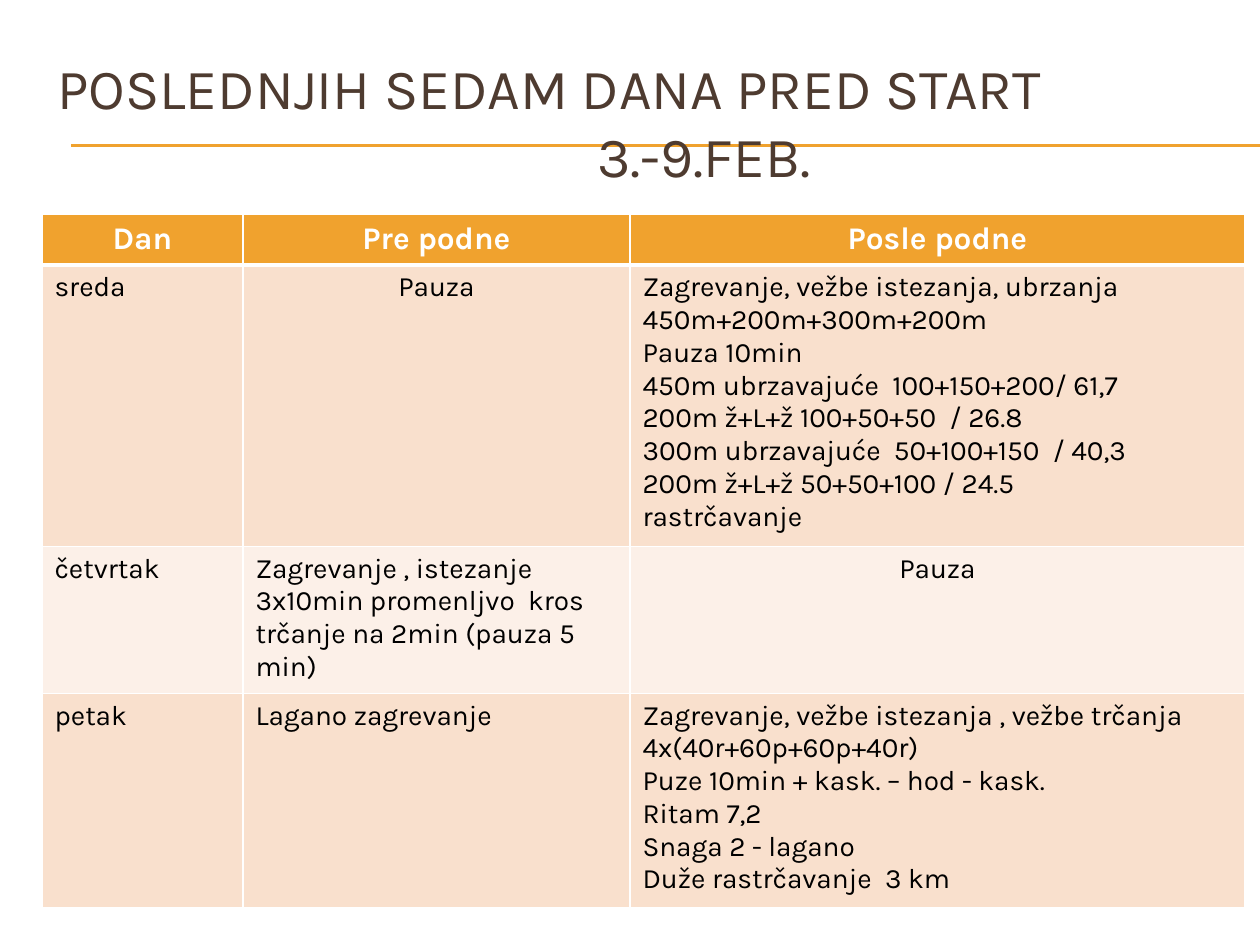
from lxml import etree
from pptx import Presentation
from pptx import util as u
from pptx.dml.color import RGBColor
from pptx.enum import shapes, text
from pptx.oxml.ns import qn

PX = 914400 // 126
FONT = "Karla"
ORANGE, BROWN, WHITE, BLACK = "F0A22E", "4E3B30", "FFFFFF", "000000"
BANDS = ["F9E0CD", "FCF0E8"]
CENTER, LEFT = text.PP_ALIGN.CENTER, text.PP_ALIGN.LEFT

# Title lines with their left indents in px
TITLE = [("POSLEDNJIH SEDAM DANA PRED START", 3), ("3.-9.FEB.", 543)]
HEADER = ["Dan", "Pre podne", "Posle podne"]
DAYS = [
    (["sreda"], ["Pauza"], [
        "Zagrevanje, vežbe istezanja, ubrzanja",
        "450m+200m+300m+200m",
        "Pauza 10min",
        "450m ubrzavajuće  100+150+200/ 61,7",
        "200m ž+L+ž 100+50+50  / 26.8",
        "300m ubrzavajuće  50+100+150  / 40,3",
        "200m ž+L+ž 50+50+100 / 24.5",
        "rastrčavanje",
    ]),
    (["četvrtak"], [
        "Zagrevanje , istezanje",
        "3x10min promenljvo  kros trčanje na 2min (pauza 5 min)",
    ], ["Pauza"]),
    (["petak"], ["Lagano zagrevanje"], [
        "Zagrevanje, vežbe istezanja , vežbe trčanja",
        "4x(40r+60p+60p+40r)",
        "Puze 10min + kask. – hod - kask.",
        "Ritam 7,2",
        "Snaga 2 - lagano",
        "Duže rastrčavanje  3 km",
    ]),
]
COLS = [201, 387, 615]
ROWS = [51, 274, 144, 208]


def px(n):
    return u.Emu(n * PX)


def rgb(color):
    return RGBColor.from_string(color)


def write(tf, lines, size, color, bold=False, align=LEFT, indents=None):
    """Fill a text frame with one paragraph per line."""
    tf.word_wrap = True
    for i, line in enumerate(lines):
        p = tf.paragraphs[0] if i == 0 else tf.add_paragraph()
        p.alignment = align
        if indents:
            p._p.get_or_add_pPr().set("marL", str(px(indents[i])))
        r = p.add_run()
        r.text = line
        r.font.name, r.font.size, r.font.bold = FONT, u.Pt(size), bold
        r.font.color.rgb = rgb(color)


def add_rule(s, y):
    line = s.shapes.add_connector(shapes.MSO_CONNECTOR.STRAIGHT, px(71), px(y), px(1260), px(y))
    line.line.color.rgb = rgb(ORANGE)
    line.line.width = u.Pt(0.75)
    etree.SubElement(line._element.spPr, qn("a:effectLst"))


def style_cell(cell, color, top, bottom):
    """Set the fill and the white borders; top and bottom are widths in points."""
    tc_pr = cell._tc.get_or_add_tcPr()
    for side, width in zip("LRTB", (1, 1, top, bottom)):
        ln = etree.SubElement(tc_pr, qn(f"a:ln{side}"), w=str(u.Pt(width)))
        fill = etree.SubElement(ln, qn("a:solidFill"))
        etree.SubElement(fill, qn("a:srgbClr"), val=WHITE)
    cell.fill.solid()
    cell.fill.fore_color.rgb = rgb(color)


def add_schedule(s):
    table = s.shapes.add_table(len(ROWS), len(COLS), px(42), px(214),
                               px(sum(COLS)), px(sum(ROWS))).table
    for col, width in zip(table.columns, COLS):
        col.width = px(width)
    for row, height in zip(table.rows, ROWS):
        row.height = px(height)
    for c, label in enumerate(HEADER):
        cell = table.cell(0, c)
        style_cell(cell, ORANGE, 1, 3)
        write(cell.text_frame, [label], 18, WHITE, bold=True, align=CENTER)
    for r, day in enumerate(DAYS, 1):
        for c, lines in enumerate(day):
            cell = table.cell(r, c)
            style_cell(cell, BANDS[(r - 1) % 2], 3 if r == 1 else 1, 1)
            write(cell.text_frame, lines, 16, BLACK,
                  align=CENTER if lines == ["Pauza"] else LEFT)


def main():
    prs = Presentation()
    prs.slide_width, prs.slide_height = px(1260), px(945)
    s = prs.slides.add_slide(prs.slide_layouts[6])
    for y in (145, 146):
        add_rule(s, y)
    title = s.shapes.add_textbox(px(42), px(63), px(1197), px(116))
    title.text_frame.vertical_anchor = text.MSO_ANCHOR.MIDDLE
    lines, indents = zip(*TITLE)
    write(title.text_frame, lines, 32.4, BROWN, indents=indents)
    add_schedule(s)
    prs.save("out.pptx")


if __name__ == "__main__":
    main()
